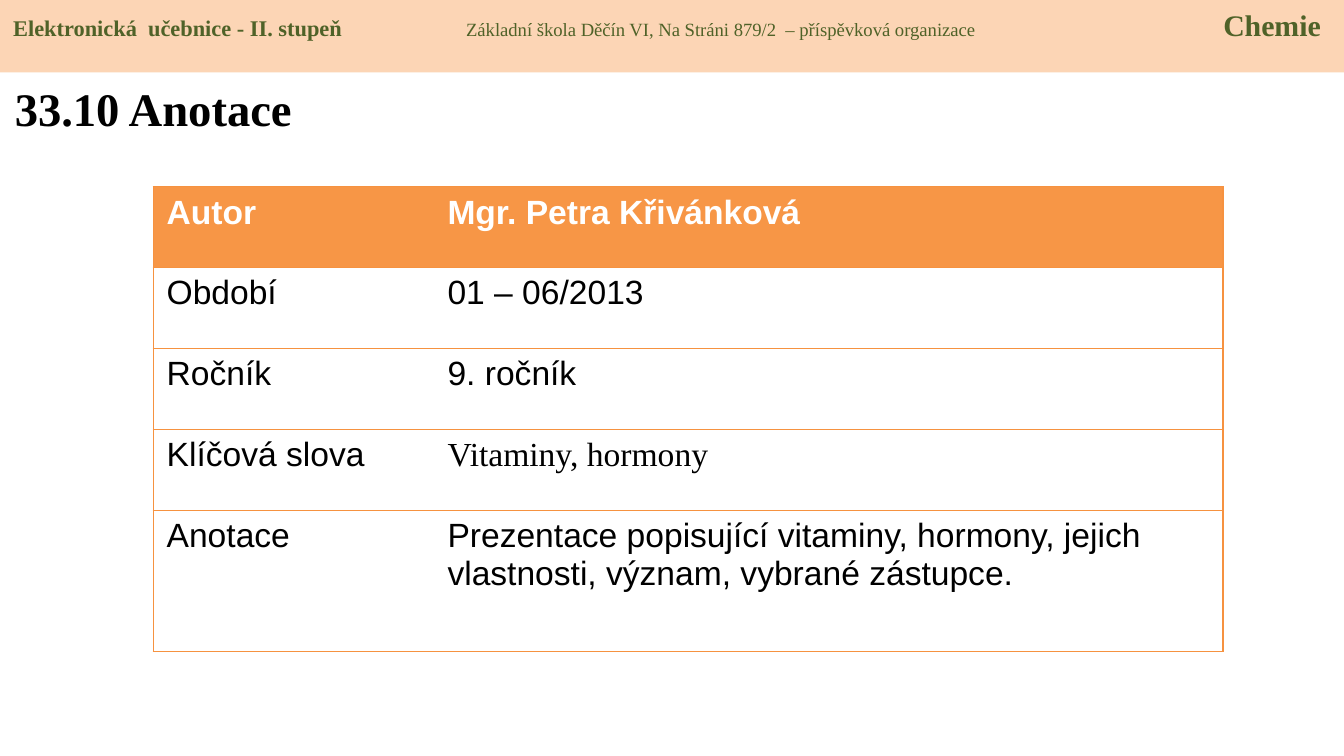
from dataclasses import dataclass

from lxml import etree
from pptx import Presentation
from pptx.dml.color import RGBColor
from pptx.enum import shapes, text
from pptx.oxml import ns
from pptx.util import Inches, Pt

SERIF, SANS = "Times New Roman", "Arial"
GREEN, PEACH, ORANGE = "4F6228", "FCD5B5", "F79646"
EDGE, BLACK, WHITE = "F69240", "000000", "FFFFFF"


@dataclass
class Run:
    words: str
    size: float
    font: str = SERIF
    color: str = BLACK
    bold: bool = False


@dataclass
class Row:
    label: str
    value: str
    font: str = SANS


def rgb(code: str) -> RGBColor:
    return RGBColor.from_string(code)


def add_run(para, item: Run) -> None:
    run = para.add_run()
    run.text = item.words
    font = run.font
    font.name, font.size, font.bold = item.font, Pt(item.size), item.bold
    font.color.rgb = rgb(item.color)


def set_tabs(para, stops: list[tuple[float, str]]) -> None:
    tabs = etree.SubElement(para._p.get_or_add_pPr(), ns.qn("a:tabLst"))
    for place, align in stops:
        etree.SubElement(tabs, ns.qn("a:tab"), pos=str(Inches(place)), algn=align)


def set_edges(cell, sides: str) -> None:
    """Draw the named sides of a cell and clear the others."""
    props = cell._tc.get_or_add_tcPr()
    for side in "LRTB":
        line = etree.SubElement(props, ns.qn(f"a:ln{side}"), w=str(Pt(0.75)))
        if side in sides:
            fill = etree.SubElement(line, ns.qn("a:solidFill"))
            etree.SubElement(fill, ns.qn("a:srgbClr"), val=EDGE)
        else:
            etree.SubElement(line, ns.qn("a:noFill"))


def add_band(slide, items: list[Run]) -> None:
    band = slide.shapes.add_shape(
        shapes.MSO_SHAPE.RECTANGLE, 0, 0, Inches(10), Inches(0.54))
    band.shadow.inherit = False
    band.fill.solid()
    band.fill.fore_color.rgb = rgb(PEACH)
    band.line.fill.background()
    frame = band.text_frame
    frame.word_wrap = True
    frame.vertical_anchor = text.MSO_ANCHOR.TOP
    para = frame.paragraphs[0]
    para.alignment = text.PP_ALIGN.LEFT
    set_tabs(para, [(3.37, "l"), (9.73, "r")])
    for item in items:
        add_run(para, item)


def add_title(slide, item: Run) -> None:
    title = slide.shapes.title
    title.left, title.top = Inches(0.01), Inches(0.54)
    title.width, title.height = Inches(3.19), Inches(0.59)
    frame = title.text_frame
    frame.vertical_anchor = text.MSO_ANCHOR.MIDDLE
    frame.margin_bottom = Inches(0.12)
    para = frame.paragraphs[0]
    para.alignment = text.PP_ALIGN.LEFT
    add_run(para, item)


def add_grid(slide, rows: list[Row]) -> None:
    high, last = 3.46, 1.05
    table = slide.shapes.add_table(
        len(rows), 2, Inches(1.14), Inches(1.39), Inches(7.96), Inches(high)).table
    table.horz_banding = False
    for col, width in zip(table.columns, (2.09, 5.87)):
        col.width = Inches(width)
    for num, row in enumerate(rows):
        head = num == 0
        end = num == len(rows) - 1
        table.rows[num].height = Inches(
            last if end else (high - last) / (len(rows) - 1))
        pairs = ((row.label, SANS, "LTB"), (row.value, row.font, "RTB"))
        for col, (words, font, sides) in enumerate(pairs):
            cell = table.cell(num, col)
            set_edges(cell, sides)
            if head:
                cell.fill.solid()
                cell.fill.fore_color.rgb = rgb(ORANGE)
            else:
                cell.fill.background()
            add_run(cell.text_frame.paragraphs[0],
                    Run(words, 18, font, WHITE if head else BLACK, head))


def main() -> None:
    deck = Presentation()
    deck.slide_width = Inches(10)
    deck.slide_height = deck.slide_width * 9 // 16
    slide = deck.slides.add_slide(deck.slide_layouts[5])

    # Header band, spaced by tab stops
    add_band(slide, [
        Run("Elektronická  učebnice - II. stupeň\t", 12, color=GREEN, bold=True),
        Run("Základní škola Děčín VI, Na Stráni 879/2  – příspěvková organizace\t",
            10, color=GREEN),
        Run("Chemie", 16, color=GREEN, bold=True),
    ])

    # Title
    add_title(slide, Run("33.10 Anotace", 25, bold=True))

    # Annotation table
    add_grid(slide, [
        Row("Autor", "Mgr. Petra Křivánková"),
        Row("Období", "01 – 06/2013"),
        Row("Ročník", "9. ročník"),
        Row("Klíčová slova", "Vitaminy, hormony", SERIF),
        Row("Anotace", "Prezentace popisující vitaminy, hormony, jejich "
            "vlastnosti, význam, vybrané zástupce."),
    ])
    deck.save("out.pptx")


if __name__ == "__main__":
    main()
